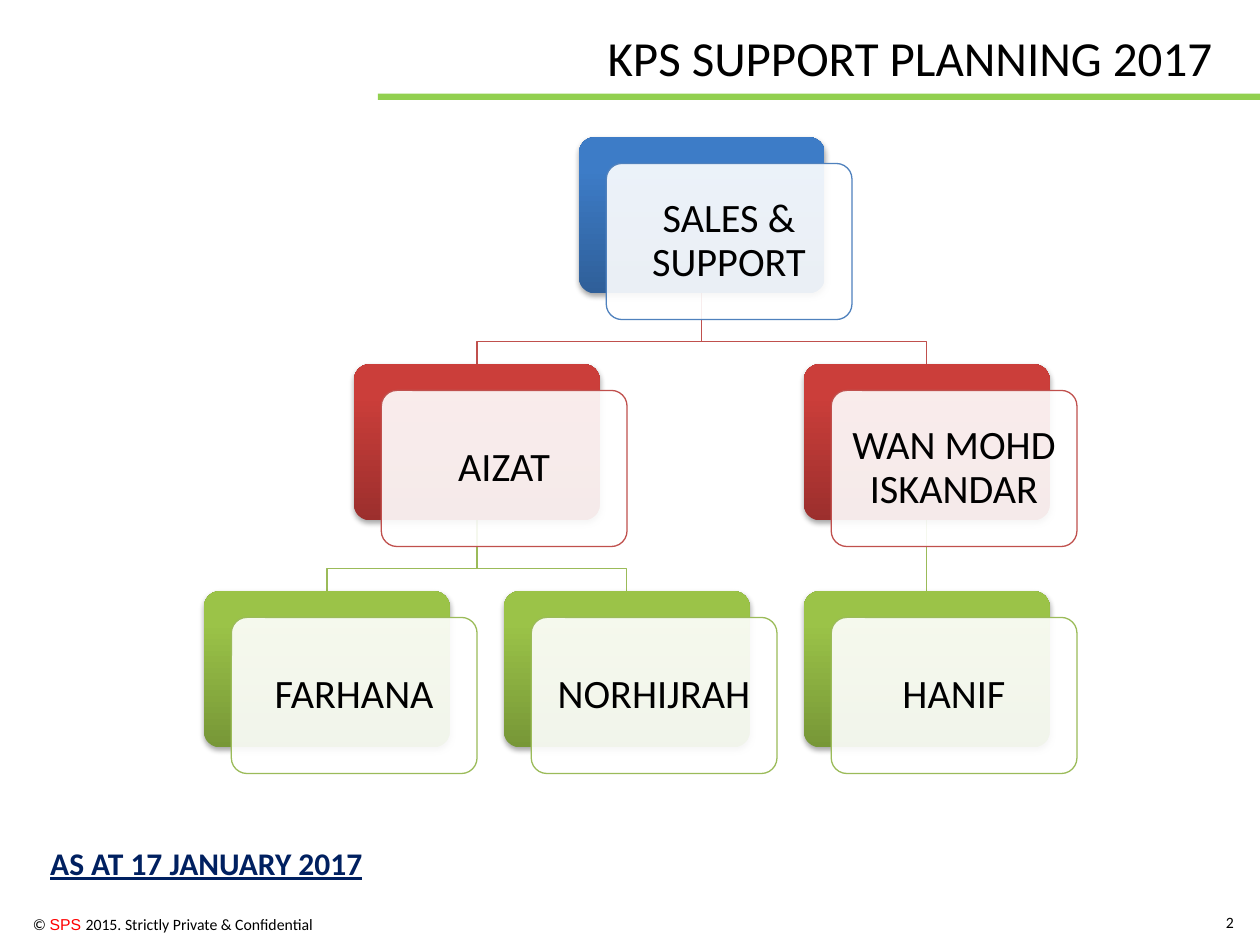
from lxml.etree import SubElement
from pptx import Presentation
from pptx.dml.color import RGBColor
from pptx.enum.shapes import MSO_CONNECTOR as Connector, MSO_SHAPE as Shape
from pptx.enum.text import MSO_ANCHOR as Anchor, MSO_AUTO_SIZE as AutoSize, PP_ALIGN as Align
from pptx.oxml.ns import qn
from pptx.util import Pt

COLORS = {
    "black": "000000", "white": "FFFFFF", "red": "FF0000", "navy": "002060",
    "rule": "92D050",
}
LEVELS = [
    {"line": "4F81BD", "dark": "2F5F99", "light": "3D7CC7"},
    {"line": "C0504D", "dark": "9C2F2D", "light": "CB3E3A"},
    {"line": "9BBB59", "dark": "779737", "light": "9BC348"},
]
CARD_WIDTH, CARD_HEIGHT = 140.4, 89.2
OFFSET_X, OFFSET_Y = 15.6, 15
CHART_LEFT, CHART_TOP = 116.6, 78.4
COLUMN_STEP, ROW_STEP = 171.4, 129.7
BEND_ABOVE_CHILD = 13

PEOPLE = {
    "SALES & SUPPORT": (0, 1.25, None),
    "AIZAT": (1, 0.5, "SALES & SUPPORT"),
    "WAN MOHD ISKANDAR": (1, 2, "SALES & SUPPORT"),
    "FARHANA": (2, 0, "AIZAT"),
    "NORHIJRAH": (2, 1, "AIZAT"),
    "HANIF": (2, 2, "WAN MOHD ISKANDAR"),
}


def rgb(color):
    return RGBColor.from_string(color)


def write(paragraph, text, size=9, color="black", font="Calibri", align=Align.LEFT,
          bold=False, underline=False, spacing=None):
    paragraph.alignment = align
    paragraph.line_spacing = spacing
    run = paragraph.add_run()
    run.text = text
    run.font.size = Pt(size)
    run.font.name = font
    run.font.bold = bold
    run.font.underline = underline
    run.font.color.rgb = rgb(COLORS[color])


def add_label(slide, left, top, width, height, wrap=True, anchor=Anchor.TOP):
    frame = slide.shapes.add_textbox(Pt(left), Pt(top), Pt(width), Pt(height)).text_frame
    frame.word_wrap = wrap
    frame.vertical_anchor = anchor
    return frame.paragraphs[0]


def add_panel(slide, kind, left, top, width, height):
    panel = slide.shapes.add_shape(kind, Pt(left), Pt(top), Pt(width), Pt(height))
    panel.shadow.inherit = False
    panel.line.fill.background()
    return panel


def add_title(slide, text):
    title = slide.shapes.title
    title.left, title.top, title.width, title.height = Pt(340), Pt(12.2), Pt(363), Pt(41.2)
    title.text_frame.word_wrap = False
    title.text_frame.auto_size = AutoSize.SHAPE_TO_FIT_TEXT
    title.text_frame.vertical_anchor = Anchor.TOP
    write(title.text_frame.paragraphs[0], text, size=28)


def add_rule(slide):
    rule = add_panel(slide, Shape.RECTANGLE, 216, 53.5, 504, 3.6)
    rule.fill.solid()
    rule.fill.fore_color.rgb = rgb(COLORS["rule"])


def card_position(name):
    level, column, _ = PEOPLE[name]
    return CHART_LEFT + column * COLUMN_STEP, CHART_TOP + level * ROW_STEP


def add_link(slide, child):
    level, _, parent = PEOPLE[child]
    child_left, child_top = card_position(child)
    parent_left, parent_top = card_position(parent)
    start_x, end_x = parent_left + CARD_WIDTH / 2, child_left + CARD_WIDTH / 2
    start_y, bend_y = parent_top + CARD_HEIGHT, child_top - BEND_ABOVE_CHILD
    if start_x == end_x:
        link = slide.shapes.add_connector(
            Connector.STRAIGHT, Pt(start_x), Pt(start_y), Pt(end_x), Pt(child_top))
        SubElement(link._element.spPr, qn("a:effectLst"))
    else:
        outline = slide.shapes.build_freeform(Pt(start_x), Pt(start_y))
        turns = [(start_x, bend_y), (end_x, bend_y), (end_x, child_top)]
        outline.add_line_segments([(Pt(x), Pt(y)) for x, y in turns], close=False)
        link = outline.convert_to_shape()
        link.fill.background()
        link.shadow.inherit = False
    link.line.color.rgb = rgb(LEVELS[level]["line"])
    link.line.width = Pt(0.75)


def add_soft_shadow(panel):
    effects = panel._element.spPr.find(qn("a:effectLst"))
    shadow = SubElement(effects, qn("a:outerShdw"), blurRad=str(Pt(3.1)), dist=str(Pt(1.8)),
                        dir="5400000", rotWithShape="0")
    tint = SubElement(shadow, qn("a:srgbClr"), val=COLORS["black"])
    SubElement(tint, qn("a:alpha"), val="35000")


def add_card(slide, name):
    palette = LEVELS[PEOPLE[name][0]]
    left, top = card_position(name)

    back = add_panel(slide, Shape.ROUNDED_RECTANGLE, left, top, CARD_WIDTH, CARD_HEIGHT)
    back.adjustments[0] = 0.1
    back.fill.gradient()
    back.fill.gradient_angle = 90
    bottom, upper = back.fill.gradient_stops
    bottom.color.rgb, upper.color.rgb = rgb(palette["dark"]), rgb(palette["light"])
    bottom.position, upper.position = 0, 0.8
    add_soft_shadow(back)

    front = add_panel(slide, Shape.ROUNDED_RECTANGLE, left + OFFSET_X, top + OFFSET_Y,
                      CARD_WIDTH, CARD_HEIGHT)
    front.adjustments[0] = 0.1
    front.fill.solid()
    front.fill.fore_color.rgb = rgb(COLORS["white"])
    tint = front._element.spPr.find(qn("a:solidFill")).find(qn("a:srgbClr"))
    SubElement(tint, qn("a:alpha"), val="90000")
    front.line.color.rgb = rgb(palette["line"])
    front.line.width = Pt(0.75)

    frame = front.text_frame
    frame.word_wrap = True
    frame.vertical_anchor = Anchor.MIDDLE
    frame.margin_left = frame.margin_right = Pt(7.2)
    write(frame.paragraphs[0], name, size=23, align=Align.CENTER, spacing=0.9)


def add_footer(slide):
    notice = add_label(slide, -23.8, 519.1, 209.5, 18)
    write(notice, "© ", align=Align.RIGHT)
    write(notice, "SPS ", color="red", font="Arial", align=Align.RIGHT)
    write(notice, "2015. Strictly Private & Confidential", align=Align.RIGHT)
    page = add_label(slide, 683.3, 512.6, 28.8, 28.8, anchor=Anchor.MIDDLE)
    write(page, "2", align=Align.RIGHT)


def main():
    deck = Presentation()
    deck.slide_width, deck.slide_height = Pt(720), Pt(540)
    slide = deck.slides.add_slide(deck.slide_layouts[5])
    add_rule(slide)
    add_footer(slide)
    add_title(slide, "KPS SUPPORT PLANNING 2017")
    for name, (_, _, parent) in PEOPLE.items():
        if parent:
            add_link(slide, name)
    for name in PEOPLE:
        add_card(slide, name)
    as_at = add_label(slide, 21.6, 478.8, 195, 28.8, wrap=False)
    write(as_at, "AS AT 17 JANUARY 2017", size=18, color="navy", bold=True, underline=True)
    deck.save("out.pptx")


if __name__ == "__main__":
    main()
